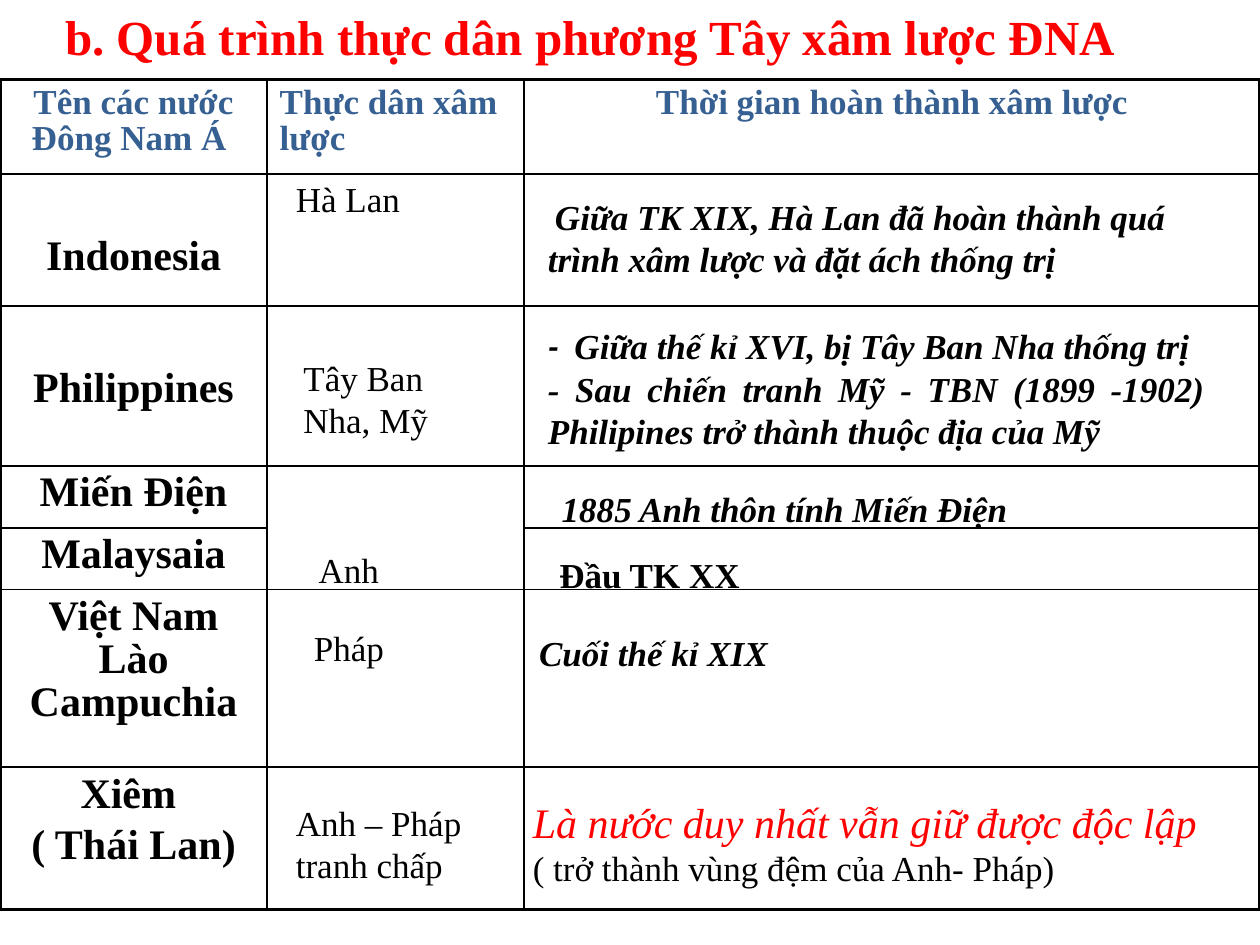
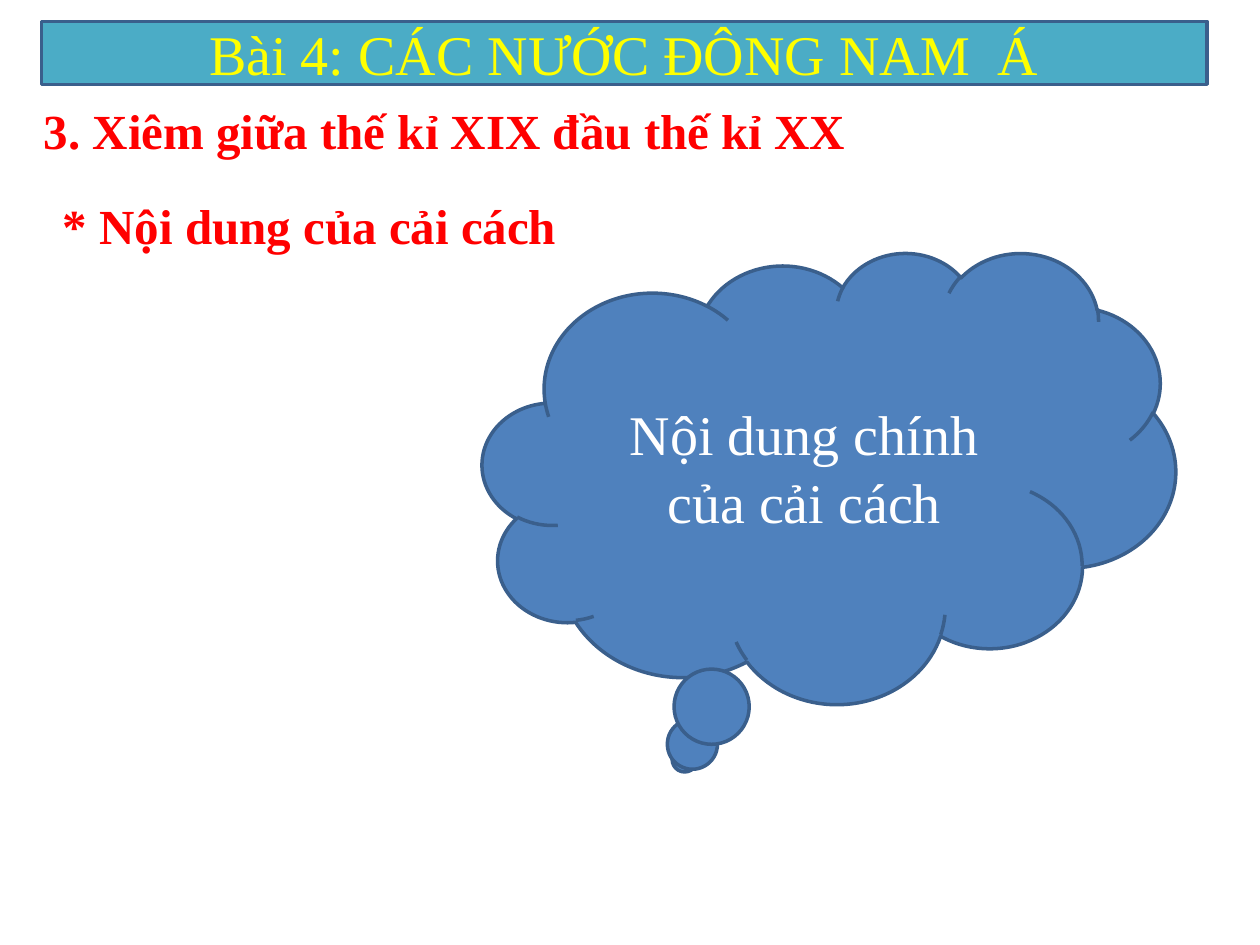
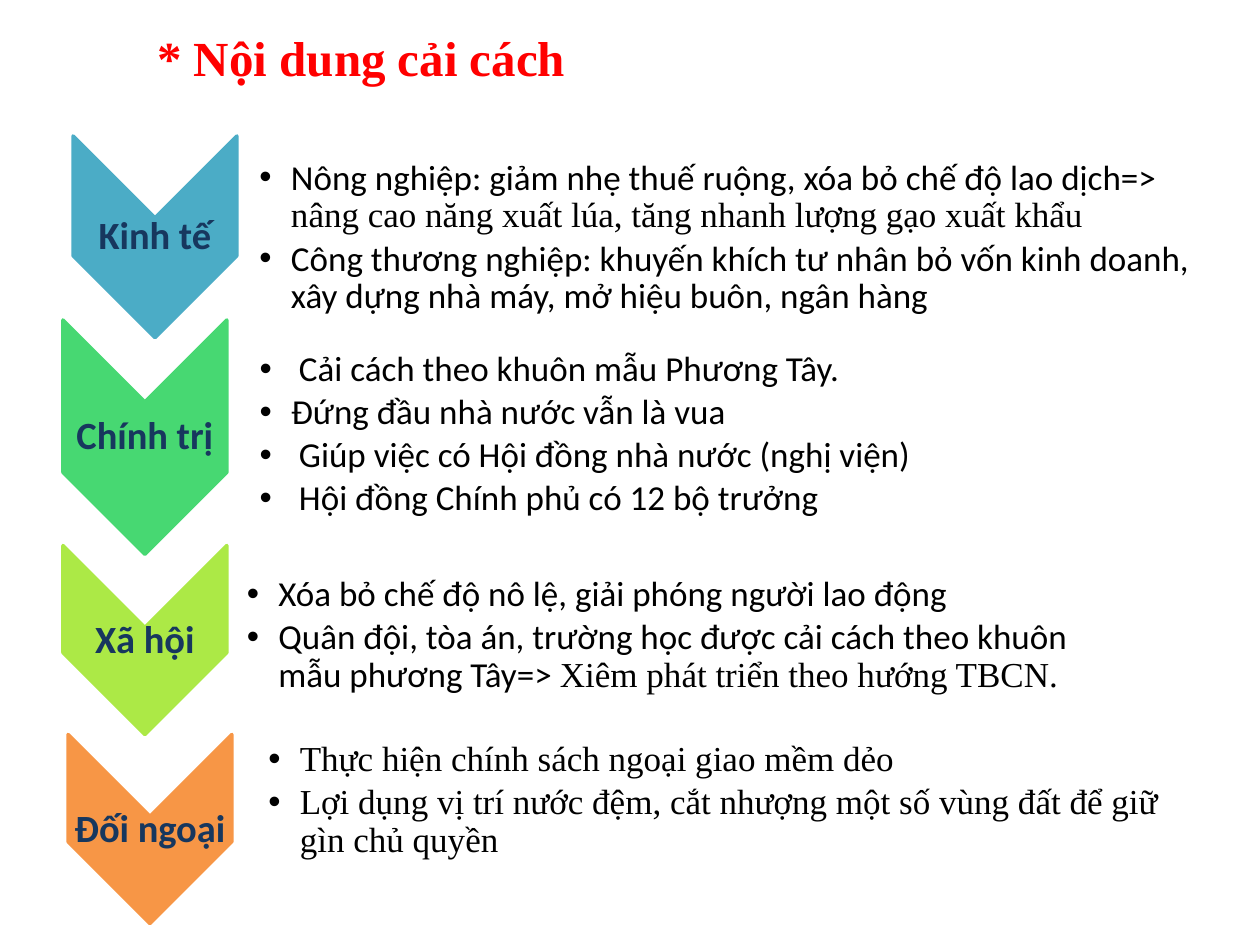
"""Build three slides on the colonisation of Southeast Asia and the reforms of Siam."""
from lxml import etree
from pptx import Presentation
from pptx.dml.color import RGBColor
from pptx.enum.shapes import MSO_SHAPE
from pptx.enum.text import MSO_ANCHOR, PP_ALIGN
from pptx.oxml.ns import qn
from pptx.util import Inches, Pt

LEFT, CENTER, JUSTIFY = PP_ALIGN.LEFT, PP_ALIGN.CENTER, PP_ALIGN.JUSTIFY
TOP, MIDDLE = MSO_ANCHOR.TOP, MSO_ANCHOR.MIDDLE
RECTANGLE, CLOUD, CHEVRON = MSO_SHAPE.RECTANGLE, MSO_SHAPE.CLOUD_CALLOUT, MSO_SHAPE.CHEVRON
SERIF, SANS = "Times New Roman", "Calibri"
BLACK, WHITE, RED, YELLOW = "000000", "FFFFFF", "FF0000", "FFFF00"
HEADER_BLUE, NAVY, OUTLINE, BLUE, TEAL = "376092", "17375E", "3A5F8C", "4F81BD", "4BACC6"


def color(hex_string):
    """Turn a hex string into a colour."""
    return RGBColor.from_string(hex_string)


def write(frame, paragraphs, align=LEFT, anchor=TOP):
    """Fill a text frame with runs of text, size, colour, style letters and font."""
    frame.word_wrap = True
    frame.vertical_anchor = anchor
    for index, runs in enumerate(paragraphs):
        paragraph = frame.add_paragraph() if index else frame.paragraphs[0]
        paragraph.alignment = align
        for text, size, hex_string, style, font_name in runs:
            run = paragraph.add_run()
            run.text = text
            run.font.size = Pt(size)
            run.font.name = font_name
            run.font.bold = "b" in style
            run.font.italic = "i" in style
            run.font.color.rgb = color(hex_string)


presentation = Presentation()
presentation.slide_width, presentation.slide_height = Inches(10), Inches(7.5)
blank = presentation.slide_layouts[6]
table_slide, cloud_slide, reform_slide = [presentation.slides.add_slide(blank) for _ in range(3)]

headings = [
    (table_slide, (0.42, 0, 8.67, 0.57), "b. Quá trình thực dân phương Tây xâm lược ĐNA"),
    (cloud_slide, (0.25, 0.75, 9, 0.57), "3. Xiêm giữa thế kỉ XIX đầu thế kỉ XX"),
    (cloud_slide, (0.4, 1.5, 5.42, 0.57), "* Nội dung của cải cách"),
    (reform_slide, (1.15, 0.17, 7.43, 0.57), "* Nội dung cải cách"),
]
for slide, box, text in headings:
    heading = slide.shapes.add_textbox(*map(Inches, box))
    write(heading.text_frame, [[(text, 28, RED, "b", SERIF)]], anchor=MIDDLE)

column_widths = [2.12, 2.04, 5.84]
row_heights = [0.75, 1.05, 1.27, 0.49, 0.49, 1.41, 1.13]
headers = ["Tên các nước Đông Nam Á ", "Thực dân xâm lược", "Thời gian hoàn thành xâm lược"]
countries = [["Indonesia"], ["Philippines"], ["Miến Điện"], ["Malaysaia"],
             ["Việt Nam Lào Campuchia"], ["Xiêm ", "( Thái Lan)"]]
last_row, last_column = len(row_heights) - 1, len(column_widths) - 1
table = table_slide.shapes.add_table(
    len(row_heights), len(column_widths), Inches(0), Inches(0.63), Inches(10), Inches(6.59)).table
table.first_row = table.horz_banding = False
for column, width in zip(table.columns, column_widths):
    column.width = Inches(width)
for row, height in zip(table.rows, row_heights):
    row.height = Inches(height)

for index, text in enumerate(headers):
    write(table.cell(0, index).text_frame, [[(text, 20, HEADER_BLUE, "b", SERIF)]],
          LEFT if index == 1 else CENTER)
for index, names in enumerate(countries, 1):
    cell = table.cell(index, 0)
    write(cell.text_frame, [[(name, 24, BLACK, "b", SERIF)] for name in names], CENTER)
    if index <= 2:
        cell.margin_top = Inches(0.49)

for row_index in range(len(row_heights)):
    for column_index in range(len(column_widths)):
        cell = table.cell(row_index, column_index)
        for paragraph in cell.text_frame.paragraphs:
            paragraph.line_spacing = 0.93
            paragraph.space_before = Pt(4.8)
        outer_edges = {"a:lnL": column_index == 0, "a:lnR": column_index == last_column,
                       "a:lnT": row_index == 0, "a:lnB": row_index == last_row}
        properties = cell._tc.get_or_add_tcPr()
        for tag, is_outer in outer_edges.items():
            border = etree.SubElement(properties, qn(tag), w=str(Pt(2.25 if is_outer else 1)))
            fill = etree.SubElement(border, qn("a:solidFill"))
            etree.SubElement(fill, qn("a:srgbClr"), val=BLACK)
        cell.fill.background()
table.cell(3, 1).merge(table.cell(4, 1))

notes_on_table = [
    ((2.18, 1.36, 1.81, 0.44), LEFT, [[(" Hà Lan", 20, BLACK, "", SERIF)]]),
    ((2.31, 2.78, 1.47, 0.77), LEFT, [[("Tây Ban Nha, Mỹ", 20, BLACK, "", SERIF)]]),
    ((2.43, 4.25, 0.87, 0.5), LEFT, [[("Anh", 20, BLACK, "", SERIF), (" ", 24, BLACK, "", SERIF)]]),
    ((2.39, 4.92, 0.76, 0.44), CENTER, [[("Pháp", 20, BLACK, "", SERIF)]]),
    ((2.25, 6.31, 1.64, 0.77), LEFT, [[("Anh – Pháp tranh chấp", 20, BLACK, "", SERIF)]]),
    ((4.25, 1.5, 5.5, 0.77), LEFT, [[
        (" ", 18, BLACK, "b", SANS),
        ("Giữa TK XIX, Hà Lan đã hoàn thành quá trình xâm lược và đặt ách thống trị",
         20, BLACK, "bi", SERIF)]]),
    ((4.25, 2.53, 5.41, 1.11), JUSTIFY, [
        [("-  ", 20, BLACK, "bi", SANS),
         ("Giữa thế kỉ XVI, bị Tây Ban Nha thống trị", 20, BLACK, "bi", SERIF)],
        [("- Sau chiến tranh Mỹ - TBN (1899 -1902) Philipines trở thành thuộc địa của Mỹ",
          20, BLACK, "bi", SERIF)]]),
    ((4.36, 3.82, 4.5, 0.44), LEFT, [[("1885 Anh thôn tính Miến Điện", 20, BLACK, "bi", SERIF)]]),
    ((4.34, 4.34, 5.08, 0.44), LEFT, [[("Đầu TK XX", 20, BLACK, "b", SERIF)]]),
    ((4.18, 4.96, 5.74, 0.44), LEFT, [[("Cuối thế kỉ XIX", 20, BLACK, "bi", SERIF)]]),
    ((4.13, 6.27, 5.49, 0.84), LEFT, [
        [("Là nước duy nhất vẫn giữ được độc lập", 24, RED, "i", SERIF)],
        [("( trở thành vùng đệm của Anh- Pháp)", 20, BLACK, "", SERIF)]]),
]
for box, align, paragraphs in notes_on_table:
    note = table_slide.shapes.add_textbox(*map(Inches, box))
    write(note.text_frame, paragraphs, align)

lesson_shapes = [
    (CLOUD, (3.83, 2, 5.5, 3.58), BLUE, "Nội dung chính của cải cách", WHITE),
    (RECTANGLE, (0.33, 0.17, 9.25, 0.5), TEAL, "Bài 4: CÁC NƯỚC ĐÔNG NAM  Á", YELLOW),
]
for kind, box, fill_color, text, text_color in lesson_shapes:
    shape = cloud_slide.shapes.add_shape(kind, *map(Inches, box))
    shape.shadow.inherit = False
    shape.fill.solid()
    shape.fill.fore_color.rgb = color(fill_color)
    shape.line.color.rgb = color(OUTLINE)
    shape.line.width = Pt(2)
    write(shape.text_frame, [[(text, 32, text_color, "", SERIF)]], CENTER, MIDDLE)

reforms = [
    ("Kinh tế", TEAL, (0.43, 1.23, 1.6), (0.58, 1.64, 0.48), (1.9, 1.1, 7.77, 1.58), [
        [("Nông nghiệp: giảm nhẹ thuế ruộng, xóa bỏ chế độ lao dịch=> ", SANS),
         ("nâng cao năng xuất lúa, tăng nhanh lượng gạo xuất khẩu", SERIF)],
        [("Công thương nghiệp: khuyến khích tư nhân bỏ vốn kinh doanh, "
          "xây dựng nhà máy, mở hiệu buôn, ngân hàng", SANS)]]),
    ("Chính trị", "47D872", (0.22, 2.82, 1.86), (0.5, 3.19, 0.56), (1.9, 2.66, 7.62, 1.58), [
        [(" Cải cách theo khuôn mẫu Phương Tây.", SANS)],
        [("Đứng đầu nhà nước vẫn là vua", SANS)],
        [(" Giúp việc có Hội đồng nhà nước (nghị viện)", SANS)],
        [(" Hội đồng Chính phủ có 12 bộ trưởng", SANS)]]),
    ("Xã hội", "ACE946", (0.4, 4.43, 1.5), (0.5, 4.86, 0.45), (1.8, 4.5, 7.03, 1.09), [
        [("Xóa bỏ chế độ nô lệ, giải phóng người lao động", SANS)],
        [("Quân đội, tòa án, trường học được cải cách theo khuôn mẫu phương Tây=> ", SANS),
         ("Xiêm phát triển theo hướng TBCN.", SERIF)]]),
    ("Đối ngoại", "F79646", (0.44, 5.93, 1.5), (0.54, 6.36, 0.45), (1.97, 5.79, 7.64, 1.13), [
        [("Thực hiện chính sách ngoại giao mềm dẻo", SERIF)],
        [("Lợi dụng vị trí nước đệm, cắt nhượng một số vùng đất để giữ gìn chủ quyền", SERIF)]]),
]
chevron_width = 1.3
for name, chevron_color, chevron_box, label_box, details_box, details in reforms:
    chevron = reform_slide.shapes.add_shape(CHEVRON, *map(Inches, (*chevron_box, chevron_width)))
    chevron.rotation = 90
    chevron.shadow.inherit = False
    chevron.fill.solid()
    chevron.fill.fore_color.rgb = color(chevron_color)
    chevron.line.color.rgb = color(chevron_color)
    chevron.line.width = Pt(2)

    left, top, height = label_box
    label = reform_slide.shapes.add_textbox(*map(Inches, (left, top, chevron_width, height))).text_frame
    label.margin_left = label.margin_right = label.margin_top = label.margin_bottom = Inches(0.02)
    write(label, [[(name, 22, NAVY, "b", SANS)]], CENTER, MIDDLE)
    label.paragraphs[0].line_spacing = 0.9

    frame = reform_slide.shapes.add_textbox(*map(Inches, details_box)).text_frame
    frame.margin_left = Inches(0.16)
    frame.margin_right = frame.margin_top = frame.margin_bottom = Inches(0.01)
    write(frame, [[(text, 20, BLACK, "", font_name) for text, font_name in runs] for runs in details],
          anchor=MIDDLE)
    for paragraph in frame.paragraphs:
        paragraph.line_spacing = 0.9
        paragraph.space_after = Pt(3)
        properties = paragraph._p.get_or_add_pPr()
        properties.set("marL", str(Inches(0.25)))
        properties.set("indent", str(-Inches(0.25)))
        etree.SubElement(properties, qn("a:buFont"), typeface="Arial")
        etree.SubElement(properties, qn("a:buChar"), char="•")

presentation.save("out.pptx")
